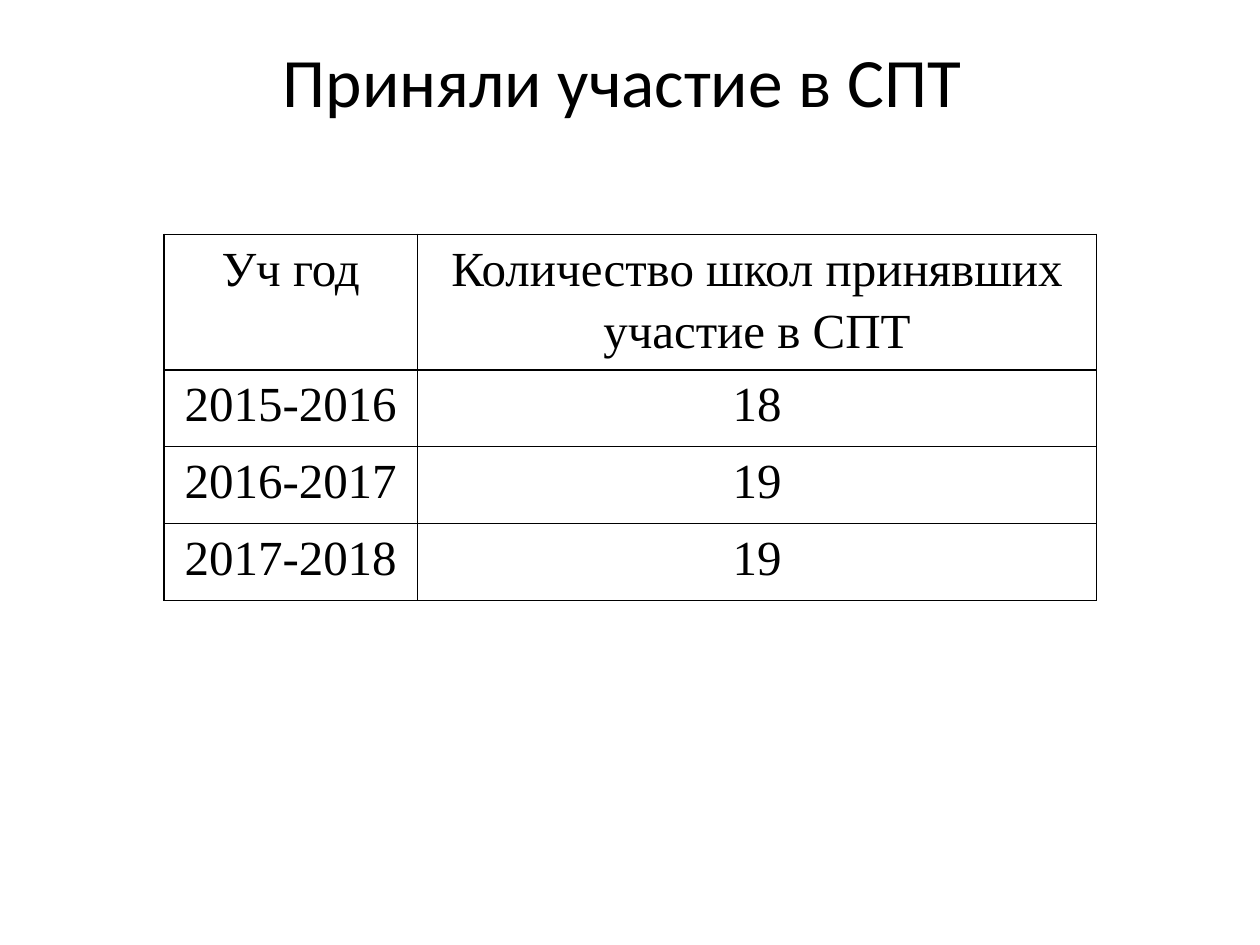
import typing

import lxml.etree
import pptx
import pptx.dml.color
import pptx.enum.text
import pptx.oxml.ns
import pptx.util

Pt = pptx.util.Pt
COLORS = {"text": "000000", "border": "000000", "background": "FFFFFF"}


class TextStyle(typing.NamedTuple):
    font: str
    size: float
    spacing: float


class Row(typing.NamedTuple):
    year: str
    schools: str
    height: float


TITLE = TextStyle("Calibri", 39.6, 1.0)
BODY = TextStyle("Times New Roman", 28, 1.15)
COLUMN_WIDTHS = (145, 388)
ROWS = (
    Row("Уч год", "Количество школ принявших участие в СПТ", 45.4),
    Row("2015-2016", "18", 44),
    Row("2016-2017", "19", 44),
    Row("2017-2018", "19", 44),
)


def rgb(name: str) -> pptx.dml.color.RGBColor:
    """Return the named colour."""
    return pptx.dml.color.RGBColor.from_string(COLORS[name])


def write(tf, text: str, style: TextStyle) -> None:
    """Write one centred paragraph in the given style."""
    p = tf.paragraphs[0]
    p.alignment = pptx.enum.text.PP_ALIGN.CENTER
    p.line_spacing = style.spacing
    r = p.add_run()
    r.text = text
    r.font.name = style.font
    r.font.size = Pt(style.size)
    r.font.color.rgb = rgb("text")


def add_borders(cell) -> None:
    """Draw a thin solid line on every side of a cell."""
    qn = pptx.oxml.ns.qn
    pr = cell._tc.get_or_add_tcPr()
    for i, side in enumerate(("lnL", "lnR", "lnT", "lnB")):
        ln = lxml.etree.Element(qn(f"a:{side}"), w=str(Pt(1)))
        fill = lxml.etree.SubElement(ln, qn("a:solidFill"))
        lxml.etree.SubElement(fill, qn("a:srgbClr"), val=COLORS["border"])
        pr.insert(i, ln)


def add_title(s, text: str) -> None:
    """Add the slide heading."""
    sp = s.shapes.add_textbox(Pt(36), Pt(21.6), Pt(648), Pt(90))
    tf = sp.text_frame
    tf.word_wrap = True
    tf.margin_top = tf.margin_bottom = 0
    tf.vertical_anchor = pptx.enum.text.MSO_ANCHOR.TOP
    write(tf, text, TITLE)


def add_schools_table(s, rows: typing.Sequence[Row]) -> None:
    """Add the table of participating schools by year."""
    height = sum(row.height for row in rows)
    sp = s.shapes.add_table(len(rows), len(COLUMN_WIDTHS), Pt(93.6), Pt(134),
                            Pt(sum(COLUMN_WIDTHS)), Pt(height))
    table = sp.table
    table.first_row = table.horz_banding = False
    for column, width in zip(table.columns, COLUMN_WIDTHS):
        column.width = Pt(width)
    for i, row in enumerate(rows):
        table.rows[i].height = Pt(row.height)
        for cell, text in zip(table.rows[i].cells, (row.year, row.schools)):
            cell.margin_left = cell.margin_right = Pt(5)
            cell.margin_top = cell.margin_bottom = 0
            cell.fill.background()
            write(cell.text_frame, text, BODY)
            add_borders(cell)


def main() -> None:
    """Build and save the slide."""
    prs = pptx.Presentation()
    prs.slide_width, prs.slide_height = Pt(720), Pt(540)
    s = prs.slides.add_slide(prs.slide_layouts[6])
    s.background.fill.solid()
    s.background.fill.fore_color.rgb = rgb("background")
    add_title(s, "Приняли участие в СПТ ")
    add_schools_table(s, ROWS)
    prs.save("out.pptx")


if __name__ == "__main__":
    main()
